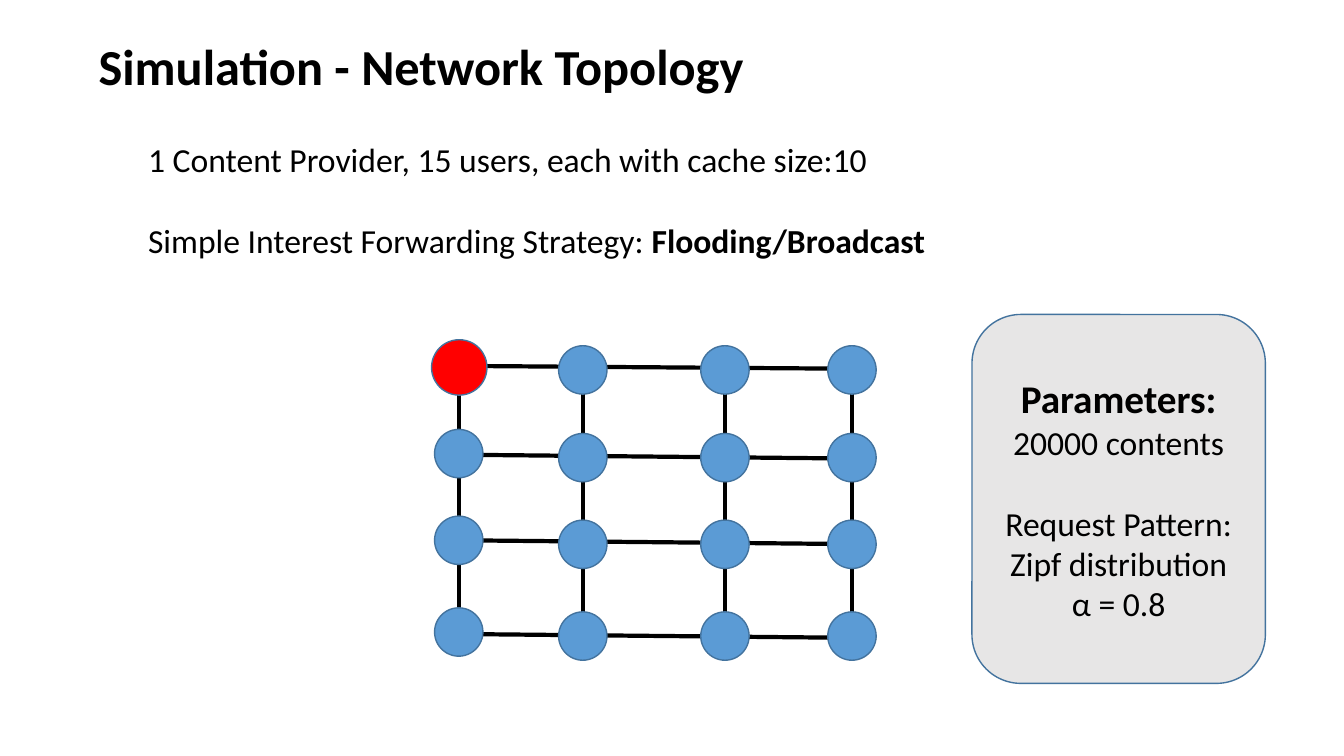
from dataclasses import dataclass

from lxml import etree
from pptx import Presentation
from pptx.dml.color import RGBColor
from pptx.enum.shapes import MSO_CONNECTOR, MSO_SHAPE
from pptx.enum.text import MSO_ANCHOR, MSO_AUTO_SIZE, PP_ALIGN
from pptx.oxml.ns import qn
from pptx.shapes.autoshape import Shape
from pptx.shapes.shapetree import GroupShapes
from pptx.slide import Slide
from pptx.text.text import TextFrame
from pptx.util import Pt

STRAIGHT = MSO_CONNECTOR.STRAIGHT
NODE = MSO_SHAPE.FLOWCHART_CONNECTOR
ROUNDED = MSO_SHAPE.ROUNDED_RECTANGLE
MIDDLE = MSO_ANCHOR.MIDDLE
NO_AUTO_SIZE = MSO_AUTO_SIZE.NONE
LEFT, CENTER = PP_ALIGN.LEFT, PP_ALIGN.CENTER
EMU_PER_PX = 9144  # 100 px to the inch


@dataclass(frozen=True)
class Theme:
    font: str = "Calibri"
    text: RGBColor = RGBColor(0, 0, 0)
    link: RGBColor = RGBColor(0, 0, 0)
    user: RGBColor = RGBColor(0x5B, 0x9B, 0xD5)
    provider: RGBColor = RGBColor(0xFF, 0, 0)
    panel: RGBColor = RGBColor(0xE7, 0xE6, 0xE6)
    outline: RGBColor = RGBColor(0x43, 0x73, 0x9E)
    title_size: int = 36
    heading_size: int = 28
    body_size: int = 24
    block_gap: int = 29
    link_width: int = 3
    outline_width: int = 1


THEME = Theme()


@dataclass(frozen=True)
class Box:
    left: int
    top: int
    width: int
    height: int


@dataclass(frozen=True)
class Link:
    x1: int
    y1: int
    x2: int
    y2: int


@dataclass(frozen=True)
class Line:
    text: str
    size: int = THEME.body_size
    bold: bool = False
    bold_tail: str = ""
    gap: int = 0


# Mesh geometry: the first column sits slightly higher than the others
NODE_SIZE = 48
COLUMN_LEFTS = (431, 554, 695, 821)
ROW_TOPS = (343, 430, 516, 607)
FIRST_COLUMN_LIFT = 4
ROW_LINKS = (
    Link(455, 363, 869, 366),
    Link(442, 451, 856, 455),
    Link(455, 536, 869, 540),
    Link(455, 629, 869, 633),
)
PROVIDER_BOX = Box(428, 337, 55, 55)

# Text content
TITLE_BOX = Box(88, 30, 803, 71)
TITLE = (Line("Simulation - Network Topology", THEME.title_size, bold=True),)
SETUP_BOX = Box(137, 133, 1045, 131)
SETUP = (
    Line("1 Content Provider, 15 users, each with cache size:10"),
    Line("Simple Interest Forwarding Strategy: ",
         bold_tail="Flooding/Broadcast", gap=THEME.block_gap),
)
PANEL_BOX = Box(964, 312, 291, 366)
PARAMETERS = (
    Line("Parameters:", THEME.heading_size, bold=True),
    Line("20000 contents"),
    Line("Request Pattern:", gap=THEME.block_gap),
    Line("Zipf distribution"),
    Line("α = 0.8"),
)


def px(value: int) -> int:
    return value * EMU_PER_PX


def place(box: Box) -> tuple[int, int, int, int]:
    return px(box.left), px(box.top), px(box.width), px(box.height)


def write_lines(frame: TextFrame, lines: tuple[Line, ...], align: PP_ALIGN) -> None:
    frame.word_wrap = True
    frame.auto_size = NO_AUTO_SIZE
    frame.text = "\n".join(line.text for line in lines)
    for paragraph, line in zip(frame.paragraphs, lines):
        paragraph.alignment = align
        paragraph.space_before = Pt(line.gap)
        if line.bold_tail:
            paragraph.add_run().text = line.bold_tail
        for index, run in enumerate(paragraph.runs):
            run.font.name = THEME.font
            run.font.size = Pt(line.size)
            run.font.bold = line.bold or index > 0
            run.font.color.rgb = THEME.text


def add_text(slide: Slide, box: Box, lines: tuple[Line, ...]) -> None:
    write_lines(slide.shapes.add_textbox(*place(box)).text_frame, lines, LEFT)


def add_outlined(shapes: GroupShapes, kind: MSO_SHAPE, box: Box, fill: RGBColor) -> Shape:
    shape = shapes.add_shape(kind, *place(box))
    shape.shadow.inherit = False
    shape.fill.solid()
    shape.fill.fore_color.rgb = fill
    shape.line.color.rgb = THEME.outline
    shape.line.width = Pt(THEME.outline_width)
    return shape


def add_link(shapes: GroupShapes, link: Link) -> None:
    connector = shapes.add_connector(
        STRAIGHT, px(link.x1), px(link.y1), px(link.x2), px(link.y2))
    connector.line.color.rgb = THEME.link
    connector.line.width = Pt(THEME.link_width)
    etree.SubElement(connector._element.spPr, qn("a:effectLst"))


def add_mesh(slide: Slide) -> None:
    shapes = slide.shapes.add_group_shape().shapes
    for link in ROW_LINKS:
        add_link(shapes, link)
    for column, left in enumerate(COLUMN_LEFTS):
        lift = FIRST_COLUMN_LIFT if column == 0 else 0
        tops = [top - lift for top in ROW_TOPS]
        radius = NODE_SIZE // 2
        center = left + radius
        add_link(shapes, Link(center, tops[0] + radius, center, tops[-1] + radius))
        for top in tops:
            add_outlined(shapes, NODE, Box(left, top, NODE_SIZE, NODE_SIZE), THEME.user)


def main() -> None:
    presentation = Presentation()
    presentation.slide_width = px(1333)
    presentation.slide_height = px(750)
    slide = presentation.slides.add_slide(presentation.slide_layouts[6])

    # Network mesh, then the heading and setup text
    add_mesh(slide)
    add_text(slide, TITLE_BOX, TITLE)
    add_text(slide, SETUP_BOX, SETUP)

    # Content provider over the first node
    add_outlined(slide.shapes, NODE, PROVIDER_BOX, THEME.provider)

    # Parameter panel
    panel = add_outlined(slide.shapes, ROUNDED, PANEL_BOX, THEME.panel)
    panel.text_frame.vertical_anchor = MIDDLE
    write_lines(panel.text_frame, PARAMETERS, CENTER)

    presentation.save("out.pptx")


if __name__ == "__main__":
    main()
